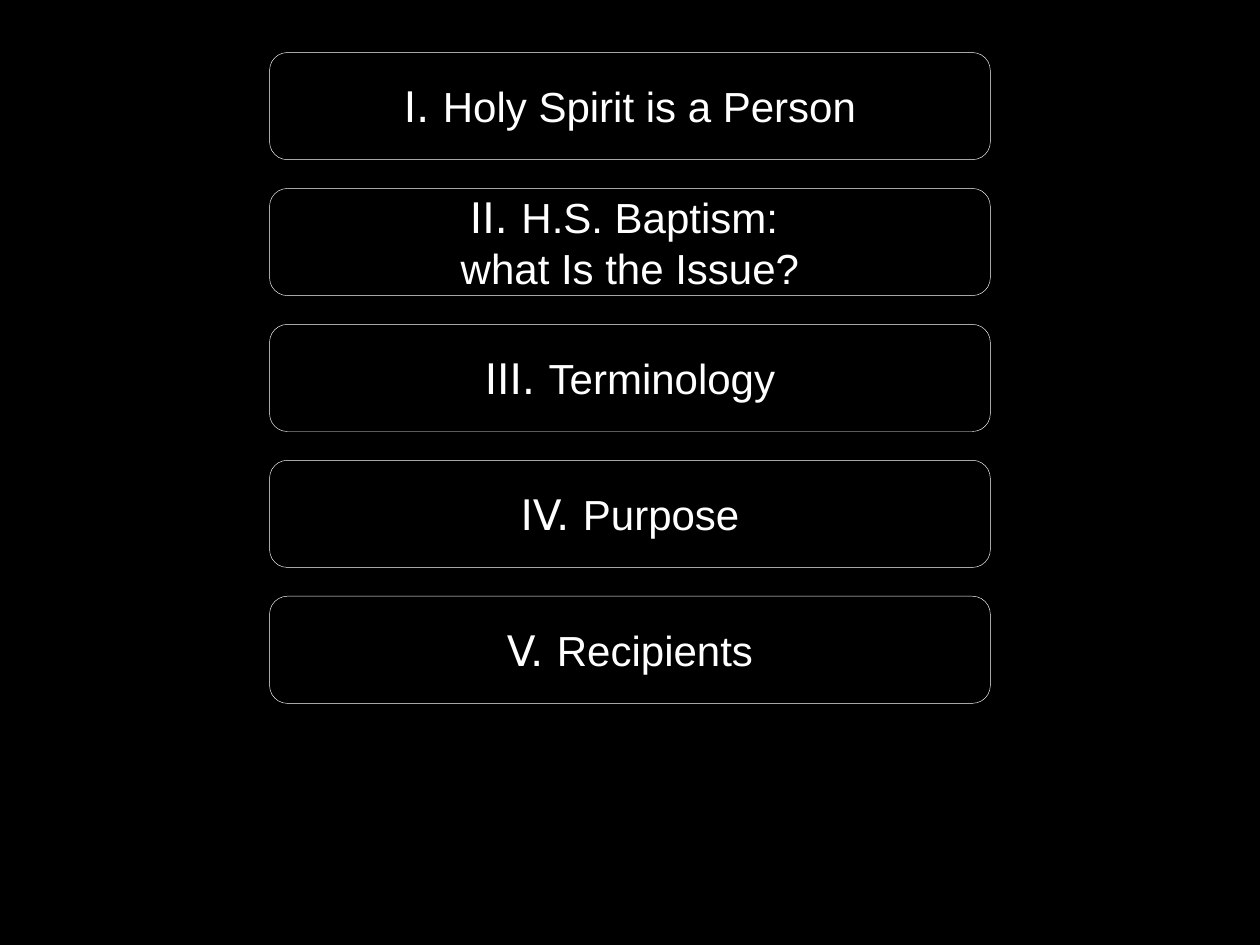
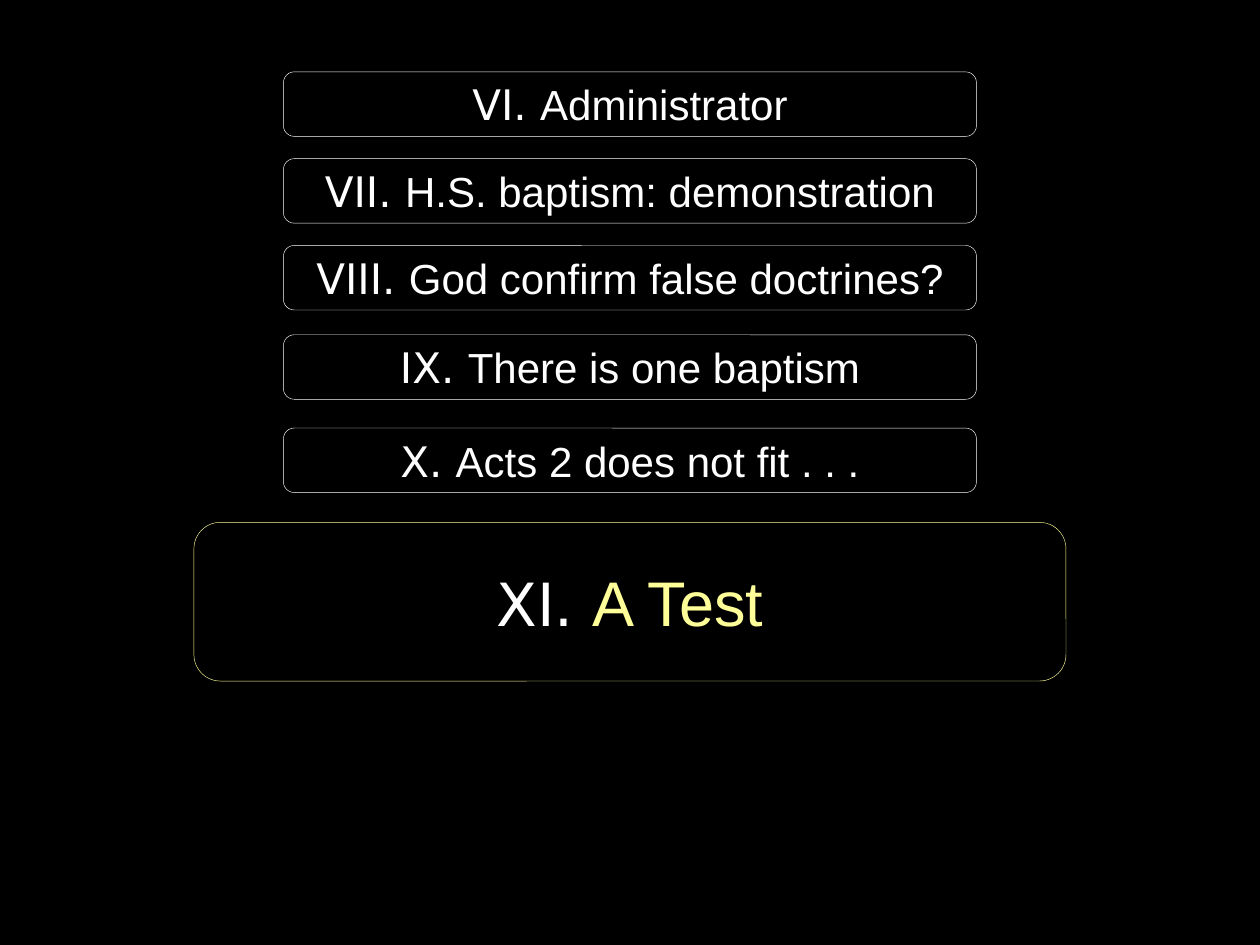
from dataclasses import dataclass

from pptx import Presentation
from pptx.dml.color import RGBColor
from pptx.enum import shapes, text
from pptx.util import Cm, Pt


@dataclass(frozen=True)
class Theme:
    black: RGBColor = RGBColor(0x00, 0x00, 0x00)
    white: RGBColor = RGBColor(0xFF, 0xFF, 0xFF)
    yellow: RGBColor = RGBColor(0xFF, 0xFF, 0x99)
    numeral_font: str = "DejaVu Sans"
    topic_font: str = "Arial"
    size: int = 24
    test_numeral_size: int = 34
    test_topic_size: int = 36
    outline: float = 0.25


THEME = Theme()
SLIDE_W, SLIDE_H = 25.4, 19.05

FIRST_TOPICS = [
    ("I.", "Holy Spirit is a Person"),
    ("II.", "H.S. Baptism: \nwhat Is the Issue?"),
    ("III.", "Terminology"),
    ("IV.", "Purpose"),
    ("V.", "Recipients"),
]
FIRST_TOP, FIRST_PITCH = 1.06, 2.74
FIRST_BOX = (14.53, 2.16)

# Top edge in cm, numeral, topic
LATER_TOPICS = [
    (1.45, "VI.", "Administrator"),
    (3.2, "VII.", "H.S. baptism: demonstration"),
    (4.95, "VIII.", "God confirm false doctrines?"),
    (6.75, "IX.", "There is one baptism"),
    (8.63, "X.", "Acts 2 does not fit . . ."),
]
LATER_BOX = (13.97, 1.3)

TEST = (10.53, "XI.", "A Test")
TEST_BOX = (17.58, 3.2)


def add_run(p, words, font, size, color):
    r = p.add_run()
    r.text = words
    r.font.name = font
    r.font.size = Pt(size)
    r.font.color.rgb = color


def add_topic(s, top, numeral, topic, box, color=THEME.white,
              numeral_size=THEME.size, topic_size=THEME.size):
    """Add an outlined box, centred across the slide, with a numbered topic."""
    width, height = box
    sp = s.shapes.add_shape(
        shapes.MSO_SHAPE.ROUNDED_RECTANGLE,
        Cm((SLIDE_W - width) / 2), Cm(top), Cm(width), Cm(height))
    sp.shadow.inherit = False
    sp.fill.solid()
    sp.fill.fore_color.rgb = THEME.black
    sp.line.color.rgb = color
    sp.line.width = Pt(THEME.outline)

    tf = sp.text_frame
    tf.word_wrap = True
    tf.vertical_anchor = text.MSO_ANCHOR.MIDDLE
    p = tf.paragraphs[0]
    p.alignment = text.PP_ALIGN.CENTER
    add_run(p, numeral + " ", THEME.numeral_font, numeral_size, THEME.white)
    for i, line in enumerate(topic.split("\n")):
        if i:
            p.add_line_break()
        add_run(p, line, THEME.topic_font, topic_size, color)


def main():
    prs = Presentation()
    prs.slide_width, prs.slide_height = Cm(SLIDE_W), Cm(SLIDE_H)
    background = prs.slide_master.background.fill
    background.solid()
    background.fore_color.rgb = THEME.black
    blank = prs.slide_layouts[6]

    s = prs.slides.add_slide(blank)
    for i, (numeral, topic) in enumerate(FIRST_TOPICS):
        add_topic(s, FIRST_TOP + i * FIRST_PITCH, numeral, topic, FIRST_BOX)

    s = prs.slides.add_slide(blank)
    for top, numeral, topic in LATER_TOPICS:
        add_topic(s, top, numeral, topic, LATER_BOX)
    add_topic(s, *TEST, TEST_BOX, THEME.yellow,
              THEME.test_numeral_size, THEME.test_topic_size)

    prs.save("out.pptx")


if __name__ == "__main__":
    main()
